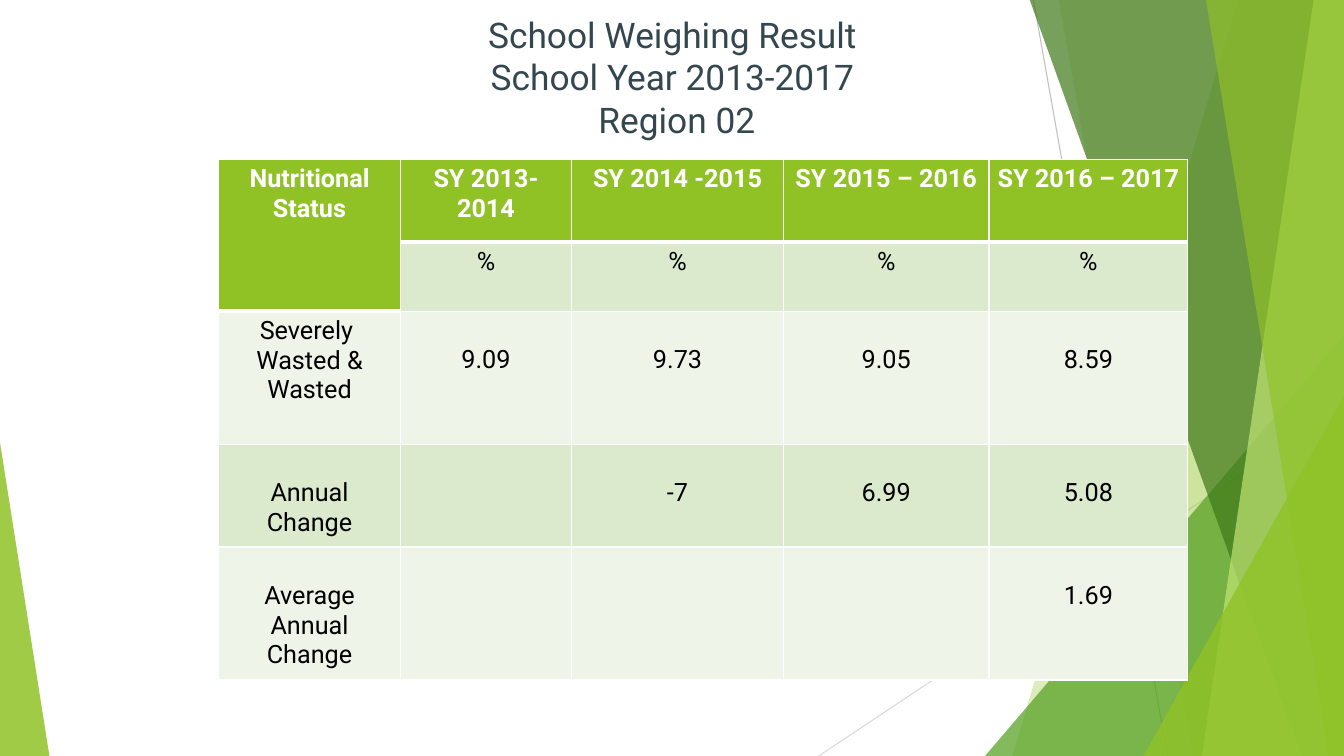
"""Build the school weighing result slide with its faceted green frame."""
import pptx
import pptx.dml.color
import pptx.enum.shapes
import pptx.enum.text
import pptx.oxml
import pptx.oxml.ns
import pptx.util

Inches = pptx.util.Inches
WIDTH, HEIGHT = 13.33, 7.5
GREEN, DARK, MID, PALE = "90C226", "3F7819", "54A021", "C0E474"
BAND_DARK, BAND_LIGHT, WHITE, BLACK = "DBE9CD", "EEF4E8", "FFFFFF", "000000"
CENTER = pptx.enum.text.PP_ALIGN.CENTER

TITLE = "School Weighing Result\vSchool Year 2013-2017\v Region 02"
COLUMNS = [1.8, 1.7, 2.1, 2.04, 1.97]
ROWS = [
    (0.82, GREEN, ["Nutritional Status", "SY 2013-2014", "SY 2014 -2015",
                   "SY 2015 – 2016", "SY 2016 – 2017"]),
    (0.63, BAND_DARK, ["", "%", "%", "%", "%"]),
    (1.32, BAND_LIGHT, ["Severely \nWasted &\nWasted", "9.09", "9.73", "9.05", "8.59"]),
    (1.02, BAND_DARK, ["Annual Change", "", "-7", "6.99", "5.08"]),
    (1.32, BAND_LIGHT, ["Average Annual Change", "", "", "", "1.69"]),
]


def color(value):
    """Turn a hex string into a colour."""
    return pptx.dml.color.RGBColor.from_string(value)


def set_format(target, values):
    """Set each named attribute on the target."""
    for name, value in values.items():
        setattr(target, name, value)


def format_text(frame, size, ink, bold=False):
    """Centre every paragraph of a frame and set its font."""
    for para in frame.paragraphs:
        para.alignment = CENTER
        for span in para.runs:
            set_format(span.font, {"name": "Roboto", "size": pptx.util.Pt(size), "bold": bold})
            span.font.color.rgb = color(ink)


def paint(shape, fill, opacity):
    """Give a shape a translucent fill without line or shadow."""
    shape.shadow.inherit = False
    shape.line.fill.background()
    shape.fill.solid()
    shape.fill.fore_color.rgb = color(fill)
    tint = shape.fill._xPr.find(".//" + pptx.oxml.ns.qn("a:srgbClr"))
    tint.append(pptx.oxml.parse_xml(
        f'<a:alpha {pptx.oxml.ns.nsdecls("a")} val="{opacity * 1000}"/>'))


def add_ray(page, start, end, ink):
    """Draw one thin background line."""
    ray = page.shapes.add_connector(
        pptx.enum.shapes.MSO_CONNECTOR.STRAIGHT, *map(Inches, start + end))
    ray.line.color.rgb = color(ink)
    ray.line.width = pptx.util.Pt(0.75)
    ray._element.spPr.append(pptx.oxml.parse_xml(
        f'<a:effectLst {pptx.oxml.ns.nsdecls("a")}/>'))


def add_facet(page, top_x, bottom_x, fill, opacity):
    """Draw a full-height facet from a slanted edge to the right side."""
    corners = [(top_x, -0.01), (WIDTH, -0.01), (WIDTH, HEIGHT), (bottom_x, HEIGHT)]
    points = [(Inches(x), Inches(y)) for x, y in corners]
    builder = page.shapes.build_freeform(*points[0])
    builder.add_line_segments(points[1:], close=True)
    paint(builder.convert_to_shape(), fill, opacity)


def add_corner(page, left, top, width, apex, fill, opacity):
    """Draw a triangle standing on the bottom edge."""
    corner = page.shapes.add_shape(
        pptx.enum.shapes.MSO_SHAPE.ISOSCELES_TRIANGLE,
        *map(Inches, (left, top, width, HEIGHT - top)))
    corner.adjustments[0] = apex
    paint(corner, fill, opacity)


def add_frame(page):
    """Draw the faceted decoration from back to front."""
    add_ray(page, (10.25, 0), (11.58, HEIGHT), "BFBFBF")
    add_ray(page, (WIDTH, 4.03), (8.12, HEIGHT), "D9D9D9")
    add_facet(page, 12.28, 10.04, GREEN, 30)
    add_facet(page, 10.5, 11.83, GREEN, 20)
    add_corner(page, 9.77, 3.33, 3.56, 1, MID, 72)
    add_facet(page, 10.21, 12.91, DARK, 70)
    add_facet(page, 13.03, 11.92, PALE, 70)
    add_facet(page, 11.96, 13.18, GREEN, 65)
    add_corner(page, 11.34, 3.93, 1.99, 1, GREEN, 80)
    add_corner(page, 0, 4.39, 0.49, 0, GREEN, 85)


def add_title(page, left, top, width, height):
    """Place the three-line title in front of the frame."""
    title = page.shapes.title
    title.element.getparent().append(title.element)
    set_format(title, {"left": Inches(left), "top": Inches(top),
                       "width": Inches(width), "height": Inches(height)})
    frame = title.text_frame
    frame.text = TITLE
    set_format(frame, {"word_wrap": True, "auto_size": pptx.enum.text.MSO_AUTO_SIZE.NONE,
                       "vertical_anchor": pptx.enum.text.MSO_ANCHOR.TOP})
    format_text(frame, 25.2, "34474F")


def add_borders(cell, bottom):
    """Rule a cell in white with the given bottom width."""
    for side, points in {"L": 1, "R": 1, "T": 1, "B": bottom}.items():
        cell._tc.get_or_add_tcPr().append(pptx.oxml.parse_xml(
            f'<a:ln{side} {pptx.oxml.ns.nsdecls("a")} w="{points * 12700}">'
            f'<a:solidFill><a:srgbClr val="{WHITE}"/></a:solidFill></a:ln{side}>'))


def fill_cell(cell, text, fill, top_margin):
    """Write and style one table cell."""
    header = fill == GREEN
    cell.text = text
    set_format(cell, {"margin_left": Inches(0.07), "margin_right": Inches(0.07),
                      "margin_top": Inches(top_margin), "margin_bottom": Inches(0.05)})
    format_text(cell.text_frame, 18, WHITE if header else BLACK, header)
    add_borders(cell, 3 if header else 1)
    cell.fill.solid()
    cell.fill.fore_color.rgb = color(fill)


def add_results(page, left, top):
    """Build the table of weighing results."""
    heights = [height for height, _, _ in ROWS]
    box = map(Inches, (left, top, sum(COLUMNS), sum(heights)))
    table = page.shapes.add_table(len(ROWS), len(COLUMNS), *box).table
    for column, width in zip(table.columns, COLUMNS):
        column.width = Inches(width)
    for index, (height, band, texts) in enumerate(ROWS):
        table.rows[index].height = Inches(height)
        for place, text in enumerate(texts):
            fill = GREEN if (index, place) == (1, 0) else band
            lowered = index > 1 and "\n" not in text
            fill_cell(table.cell(index, place), text, fill, 0.34 if lowered else 0.05)
    table.cell(0, 0).merge(table.cell(1, 0))


def main():
    """Assemble and save the deck."""
    deck = pptx.Presentation()
    set_format(deck, {"slide_width": Inches(WIDTH), "slide_height": Inches(HEIGHT)})
    page = deck.slides.add_slide(deck.slide_layouts.get_by_name("Title Only"))
    add_frame(page)
    add_title(page, 2.17, 0.08, 9, 1.25)
    add_results(page, 2.17, 1.58)
    deck.save("out.pptx")


if __name__ == "__main__":
    main()
